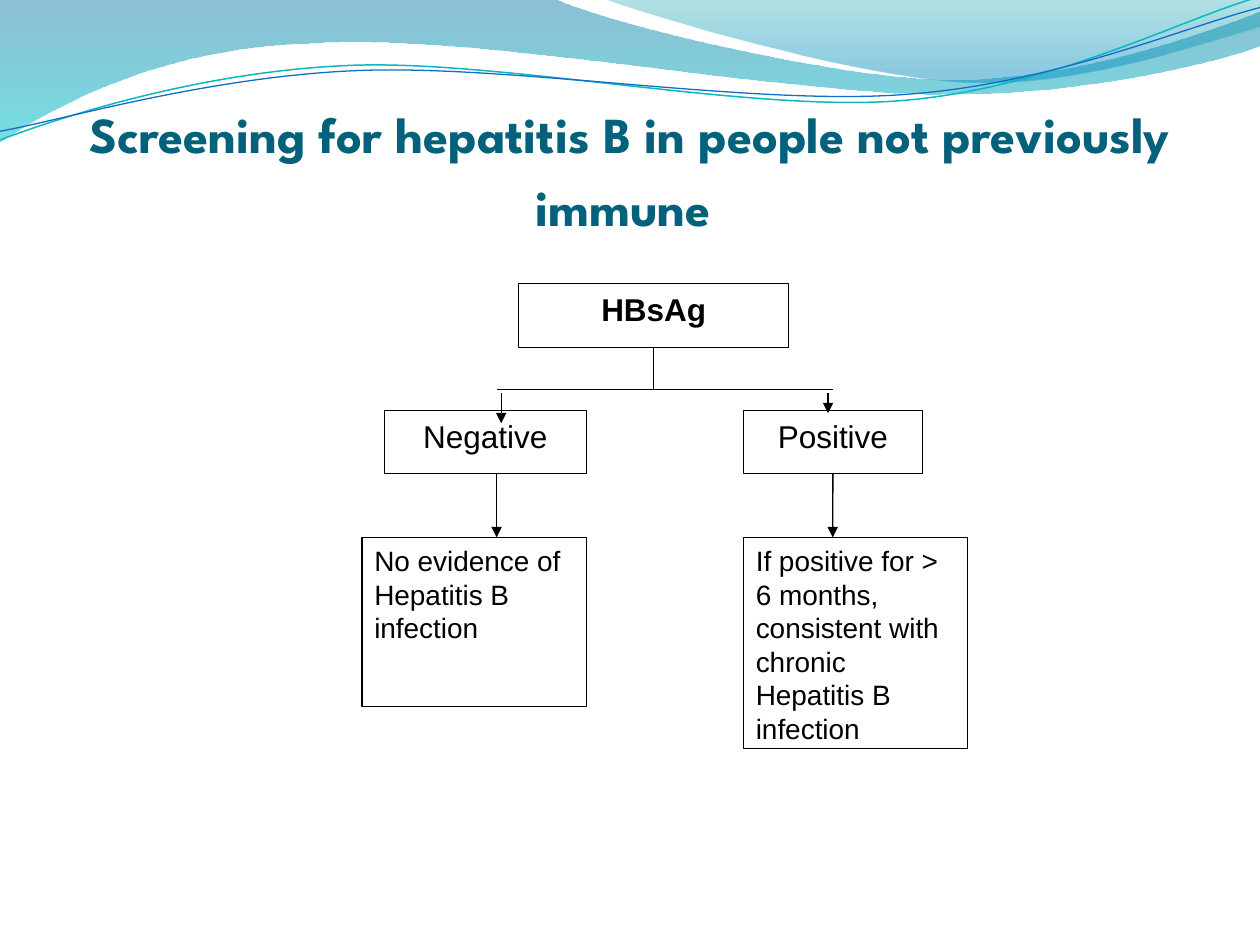
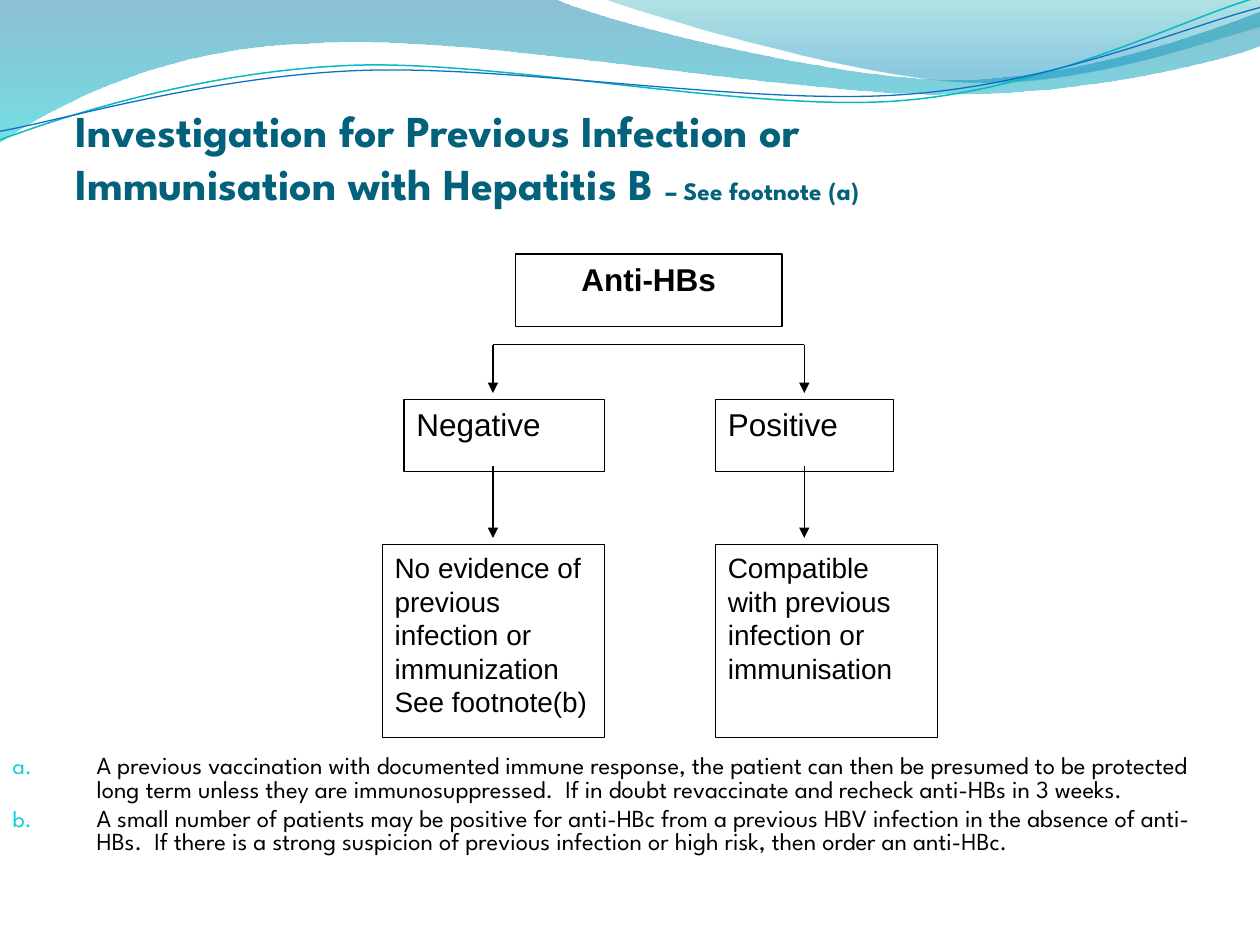
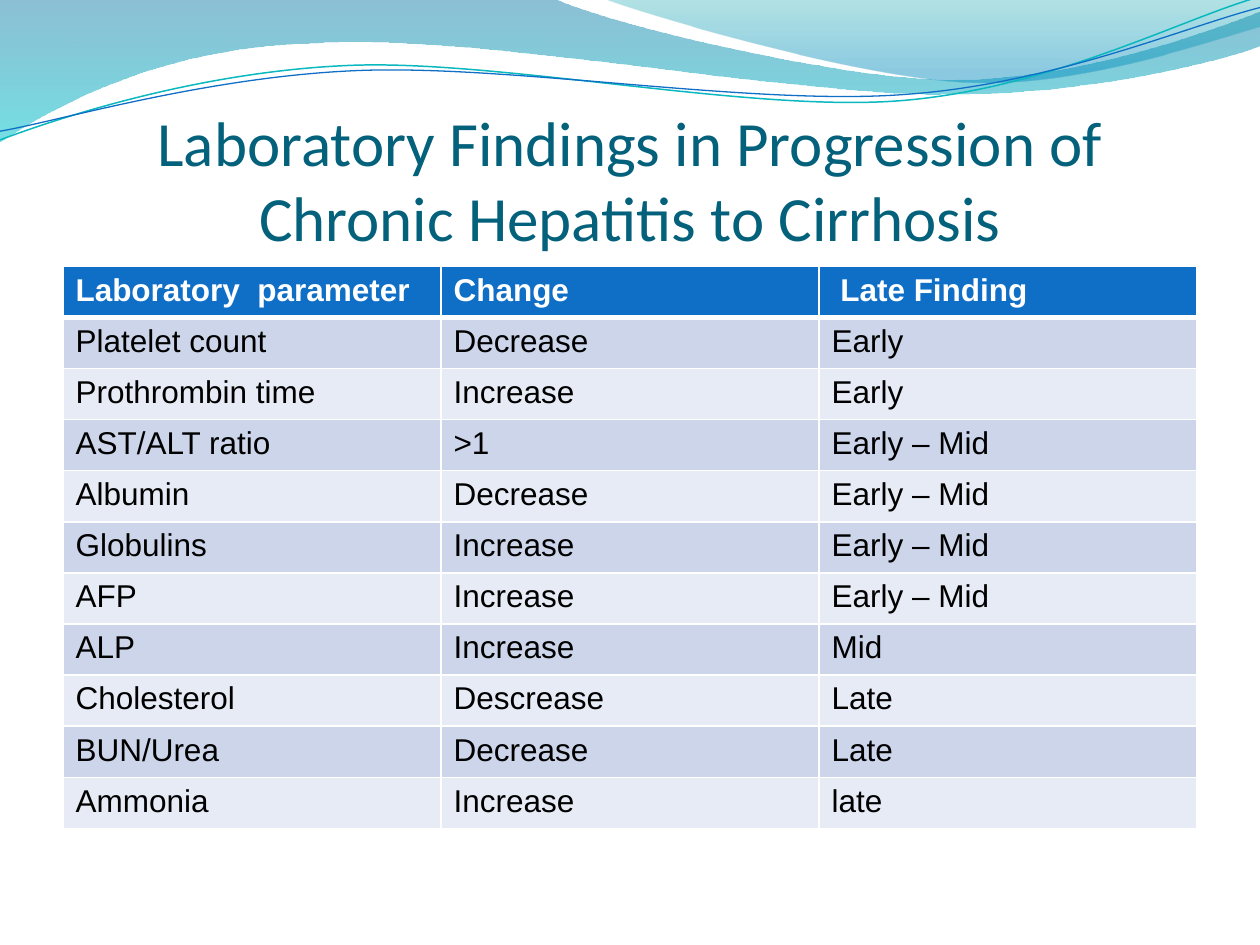
from dataclasses import dataclass

from lxml import etree
from pptx import Presentation
from pptx.dml.color import RGBColor
from pptx.enum.shapes import MSO_CONNECTOR, MSO_SHAPE
from pptx.enum.text import MSO_ANCHOR, MSO_AUTO_SIZE, PP_ALIGN
from pptx.oxml.ns import qn
from pptx.util import Pt

LEFT, CENTER = PP_ALIGN.LEFT, PP_ALIGN.CENTER
TOP, BOTTOM = MSO_ANCHOR.TOP, MSO_ANCHOR.BOTTOM
NO_AUTOFIT = MSO_AUTO_SIZE.NONE
RECTANGLE = MSO_SHAPE.RECTANGLE
STRAIGHT = MSO_CONNECTOR.STRAIGHT
BOTTOM_SIDE = 2
TITLE_CONTENT, TITLE_ONLY = 1, 5


# Colours, fonts and type sizes
@dataclass(frozen=True)
class Theme:
    title: str = "04617B"
    ink: str = "000000"
    paper: str = "FFFFFF"
    header: str = "0F6FC6"
    bands: tuple = ("CCD5EA", "E7EBF5")
    bullet: str = "0BD0D9"
    display_font: str = "League Spartan"
    title_font: str = "Calibri"
    text_font: str = "Arial"
    title_size: float = 36
    screening_size: float = 28.8
    investigation_size: float = 25.2
    remark_size: float = 14.4
    label_size: float = 18
    outcome_size: float = 16
    footnote_size: float = 14
    hairline: float = 0.75


THEME = Theme()


@dataclass(frozen=True)
class Wave:
    """A start point, then straight (1 point) or cubic (3 points) segments."""
    start: tuple
    segments: tuple
    stops: tuple = ()  # (position, colour, opacity percent)
    line: str = ""
    width: float = 0
    rotation: float = 0


@dataclass(frozen=True)
class Span:
    text: str
    size: float
    font: str = THEME.display_font
    bold: bool = True


@dataclass(frozen=True)
class Box:
    text: str
    left: float
    top: float
    width: float
    height: float
    size: float = THEME.label_size
    align: PP_ALIGN = LEFT
    bold: bool = False


@dataclass(frozen=True)
class Link:
    start: tuple
    end: tuple
    arrow: bool = True
    source: str = ""  # text of the box whose bottom side it leaves


WAVES = (
    Wave((0, 0), (
        ((316.8, -0.7),),
        ((342.7, 12.2), (478.1, 45.4), (545.8, 45.4)),
        ((614.2, 45.4), (689.8, 18.7), (720, 6.5)),
        ((720.7, 25.9),),
        ((707.8, 31.7), (626.4, 54.7), (537.1, 54)),
        ((447.8, 54), (275, 20.2), (185, 24.5)),
        ((92.9, 25.9), (33.1, 59.8), (-0.7, 81.4)),
        ((0, 0),),
    ), stops=((0, "0074A1", 45), (1, "00C6CF", 55))),
    Wave((344.9, -0.7), (
        ((366.5, 7.9), (491, 44.6), (553.7, 46.8)),
        ((616.3, 49.7), (691.9, 23), (720, 15.1)),
        ((720, 0),),
        ((344.9, -0.7),),
    ), stops=((0, "00A1A9", 30), (0.8, "008BBF", 45))),
    Wave((-1.4, 63), (
        ((33.8, 51.7), (114.1, 29.4), (199.8, 29.9)),
        ((284.9, 30.3), (425.8, 67.3), (512.4, 64.9)),
        ((599, 62.4), (676.5, 25.7), (720.2, 15.5)),
    ), line="0AB8BF", width=0.85, rotation=357.3),
    Wave((-1.1, 58), (
        ((32.9, 53.8), (118.3, 32.5), (204.1, 33)),
        ((290.6, 33.4), (428.9, 63.8), (515.5, 61.4)),
        ((601.3, 59.6), (678.5, 30.1), (721.4, 21.3)),
    ), line="0F6FC6", width=0.75, rotation=357.3),
)

SCREENING_BOXES = (
    Box("HBsAg", 296.5, 162.2, 154.2, 36.2, align=CENTER, bold=True),
    Box("Negative", 219.7, 234.7, 115.3, 36.1, align=CENTER),
    Box("Positive", 424.8, 234.7, 102.3, 36.1, align=CENTER),
    Box("No evidence of Hepatitis B infection",
        206.8, 307.1, 128.2, 96.6, THEME.outcome_size),
    Box("If positive for > 6 months, consistent with chronic Hepatitis B infection",
        424.8, 307.1, 128.2, 120.8, THEME.outcome_size),
)
SCREENING_LINKS = (
    Link((283.8, 222.6), (475.9, 222.6), arrow=False),
    Link((373.6, 198.4), (373.6, 222.6), arrow=False, source="HBsAg"),
    Link((283.8, 270.8), (283.8, 307.1)),
    Link((475.9, 270.8), (475.9, 307.1), source="Positive"),
    Link((286.4, 224.6), (286.4, 241.9)),
    Link((473.2, 224.6), (473.2, 236.2)),
)

INVESTIGATION_BOXES = (
    Box("Anti-HBs", 294.5, 145.2, 152.5, 41.5, align=CENTER, bold=True),
    Box("Compatible with previous infection or immunisation",
        408.8, 311.1, 126.9, 110.5, THEME.outcome_size),
    Box("No evidence of previous infection or immunization\nSee footnote(b)",
        218.4, 311.1, 126.9, 110.5, THEME.outcome_size),
    Box("Positive", 408.8, 228.1, 101.7, 41.4),
    Box("Negative", 230.9, 228.1, 114.5, 41.4),
)
BRANCHES = (281.7, 459.6)
INVESTIGATION_LINKS = (
    Link((BRANCHES[0], 197), (BRANCHES[1], 197), arrow=False),
    *(Link((x, top), (x, bottom))
      for top, bottom in ((197, 224.6), (266.2, 307.4)) for x in BRANCHES),
)

FOOTNOTES = (
    "A previous vaccination with documented immune response, the patient can then "
    "be presumed to be protected long term unless they are immunosuppressed.  "
    "If in doubt revaccinate and recheck anti-HBs in 3 weeks.",
    "A small number of patients may be positive for anti-HBc from a previous HBV "
    "infection in the absence of anti-HBs.  If there is a strong suspicion of "
    "previous infection or high risk, then order an anti-HBc.",
)

FINDINGS = (
    ("Laboratory  parameter", "Change", " Late Finding"),
    ("Platelet count", "Decrease", "Early"),
    ("Prothrombin time", "Increase", "Early"),
    ("AST/ALT ratio", ">1", "Early – Mid"),
    ("Albumin", "Decrease", "Early – Mid"),
    ("Globulins", "Increase", "Early – Mid"),
    ("AFP", "Increase", "Early – Mid"),
    ("ALP", "Increase", "Mid"),
    ("Cholesterol", "Descrease", "Late"),
    ("BUN/Urea", "Decrease", "Late"),
    ("Ammonia", "Increase", "late"),
)


def rgb(colour: str) -> RGBColor:
    return RGBColor.from_string(colour)


def style_font(font, size: float, name: str, colour: str, bold: bool = False) -> None:
    font.size, font.name, font.bold = Pt(size), name, bold
    font.color.rgb = rgb(colour)


def place(shape, left: float, top: float, width: float, height: float) -> None:
    shape.left, shape.top = Pt(left), Pt(top)
    shape.width, shape.height = Pt(width), Pt(height)


# Wave band on the master
def outline_wave(slide, wave: Wave):
    """Lay out every point as a line, then join each group of three into a curve."""
    builder = slide.shapes.build_freeform(Pt(wave.start[0]), Pt(wave.start[1]))
    builder.add_line_segments(
        [(Pt(x), Pt(y)) for segment in wave.segments for x, y in segment],
        close=bool(wave.stops))
    shape = builder.convert_to_shape()
    lines = iter(list(shape._element.spPr.iter(qn("a:lnTo"))))
    for segment in wave.segments:
        first, *others = [next(lines) for _ in segment]
        if others:
            first.tag = qn("a:cubicBezTo")
            for line in others:
                first.append(line[0])
                line.getparent().remove(line)
    return shape


def draw_wave(slide, wave: Wave):
    shape = outline_wave(slide, wave)
    shape.shadow.inherit = False
    shape.rotation = wave.rotation
    if wave.line:
        shape.fill.background()
        shape.line.color.rgb = rgb(wave.line)
        shape.line.width = Pt(wave.width)
        return shape
    shape.line.fill.background()
    shape.fill.gradient()
    shape.fill.gradient_angle = 270
    for stop, (position, colour, _) in zip(shape.fill.gradient_stops, wave.stops):
        stop.position = position
        stop.color.rgb = rgb(colour)
    colours = shape._element.spPr.iter(qn("a:srgbClr"))
    for element, (_, _, opacity) in zip(colours, wave.stops):
        etree.SubElement(element, qn("a:alpha"), val=str(opacity * 1000))
    return shape


def add_band_to_master(deck, slide) -> None:
    """Draw the waves on a slide, then move them behind the master's placeholders."""
    tree = deck.slide_master.shapes._spTree
    for index, wave in enumerate(WAVES):
        element = draw_wave(slide, wave)._element
        element.nvSpPr.cNvPr.set("id", str(100 + index))
        tree.insert(2 + index, element)


# Titles and footnotes
def set_title(slide, spans: tuple, align: PP_ALIGN = CENTER, anchor: MSO_ANCHOR = TOP):
    title = slide.shapes.title
    place(title, 36, 55.4, 648, 90)
    frame = title.text_frame
    frame.word_wrap, frame.auto_size = True, NO_AUTOFIT
    frame.vertical_anchor = anchor
    para = frame.paragraphs[0]
    para.text = spans[0].text
    para.alignment = align
    for span in spans[1:]:
        para.add_run().text = span.text
    # A line break splits the first span into several runs
    extra = len(para.runs) - len(spans)
    for run, span in zip(para.runs, spans[:1] * extra + spans):
        style_font(run.font, span.size, span.font, THEME.title, span.bold)
    return frame


def set_footnotes(slide) -> None:
    body = slide.placeholders[1]
    place(body, 0, 428.4, 705.6, 96.5)
    frame = body.text_frame
    frame.auto_size, frame.vertical_anchor = NO_AUTOFIT, TOP
    frame.text = "\n".join(FOOTNOTES)
    for para in frame.paragraphs:
        para.line_spacing, para.space_before = 0.8, Pt(3)
        style_font(para.runs[0].font, THEME.footnote_size, THEME.display_font, THEME.ink)
        props = para._p.get_or_add_pPr()
        props.set("marL", str(Pt(48)))
        props.set("indent", str(-Pt(48)))
        colour = etree.SubElement(props, qn("a:buClr"))
        etree.SubElement(colour, qn("a:srgbClr"), val=THEME.bullet)
        etree.SubElement(props, qn("a:buSzPct"), val="95000")
        etree.SubElement(props, qn("a:buFont"), typeface=THEME.display_font)
        etree.SubElement(props, qn("a:buAutoNum"), type="alphaLcPeriod")


# Flow charts
def draw_box(slide, box: Box):
    shape = slide.shapes.add_shape(
        RECTANGLE, Pt(box.left), Pt(box.top), Pt(box.width), Pt(box.height))
    shape.shadow.inherit = False
    shape.fill.solid()
    shape.fill.fore_color.rgb = rgb(THEME.paper)
    shape.line.color.rgb = rgb(THEME.ink)
    shape.line.width = Pt(THEME.hairline)
    frame = shape.text_frame
    frame.word_wrap, frame.vertical_anchor = True, TOP
    frame.text = box.text
    for para in frame.paragraphs:
        para.alignment = box.align
        style_font(para.runs[0].font, box.size, THEME.text_font, THEME.ink, box.bold)
    return shape


def draw_link(slide, link: Link, shapes: dict) -> None:
    connector = slide.shapes.add_connector(
        STRAIGHT, *(Pt(value) for value in link.start + link.end))
    if link.source:
        connector.begin_connect(shapes[link.source], BOTTOM_SIDE)
    connector.line.color.rgb = rgb(THEME.ink)
    connector.line.width = Pt(THEME.hairline)
    if link.arrow:
        etree.SubElement(connector.line._get_or_add_ln(), qn("a:tailEnd"), type="triangle")
    etree.SubElement(connector._element.spPr, qn("a:effectLst"))


def draw_flow(slide, boxes: tuple, links: tuple) -> None:
    shapes = {box.text: draw_box(slide, box) for box in boxes}
    for link in links:
        draw_link(slide, link, shapes)


# Table
def set_borders(cell, top: float, bottom: float) -> None:
    props = cell._tc.get_or_add_tcPr()
    sides = (("a:lnL", 1), ("a:lnR", 1), ("a:lnT", top), ("a:lnB", bottom))
    for index, (tag, width) in enumerate(sides):
        line = etree.Element(qn(tag), w=str(Pt(width)))
        fill = etree.SubElement(line, qn("a:solidFill"))
        etree.SubElement(fill, qn("a:srgbClr"), val=THEME.paper)
        props.insert(index, line)


def draw_findings(slide) -> None:
    rows, columns, row_height = len(FINDINGS), len(FINDINGS[0]), 29.2
    table = slide.shapes.add_table(
        rows, columns, Pt(36), Pt(152.2), Pt(648), Pt(rows * row_height)).table
    for row in table.rows:
        row.height = Pt(row_height)
    for row, texts in enumerate(FINDINGS):
        header = row == 0
        for column, text in enumerate(texts):
            cell = table.cell(row, column)
            cell.text = text
            style_font(cell.text_frame.paragraphs[0].runs[0].font, THEME.label_size,
                       THEME.text_font, THEME.paper if header else THEME.ink, header)
            cell.fill.solid()
            cell.fill.fore_color.rgb = rgb(
                THEME.header if header else THEME.bands[(row - 1) % 2])
            set_borders(cell, top=3 if row == 1 else 1, bottom=3 if header else 1)


# Slides
def add_slide(deck, layout: int):
    return deck.slides.add_slide(deck.slide_layouts[layout])


def add_screening(deck):
    slide = add_slide(deck, TITLE_ONLY)
    set_title(slide, (
        Span("Screening for hepatitis B in people not previously immune",
             THEME.screening_size),
        Span(" ", THEME.title_size, THEME.title_font, False)))
    draw_flow(slide, SCREENING_BOXES, SCREENING_LINKS)
    return slide


def add_investigation(deck) -> None:
    slide = add_slide(deck, TITLE_CONTENT)
    set_title(slide, (
        Span("Investigation for Previous Infection or\vImmunisation with Hepatitis B ",
             THEME.investigation_size),
        Span("– See footnote (a)", THEME.remark_size)), LEFT)
    set_footnotes(slide)
    draw_flow(slide, INVESTIGATION_BOXES, INVESTIGATION_LINKS)


def add_findings(deck) -> None:
    slide = add_slide(deck, TITLE_ONLY)
    frame = set_title(slide, (
        Span("Laboratory Findings in Progression of Chronic Hepatitis to Cirrhosis",
             THEME.title_size, THEME.title_font, False),), anchor=BOTTOM)
    frame.margin_left = frame.margin_right = frame.margin_bottom = 0
    draw_findings(slide)


def main() -> None:
    deck = Presentation()
    deck.slide_width, deck.slide_height = Pt(720), Pt(540)
    screening = add_screening(deck)
    add_band_to_master(deck, screening)
    add_investigation(deck)
    add_findings(deck)
    deck.save("out.pptx")


if __name__ == "__main__":
    main()
